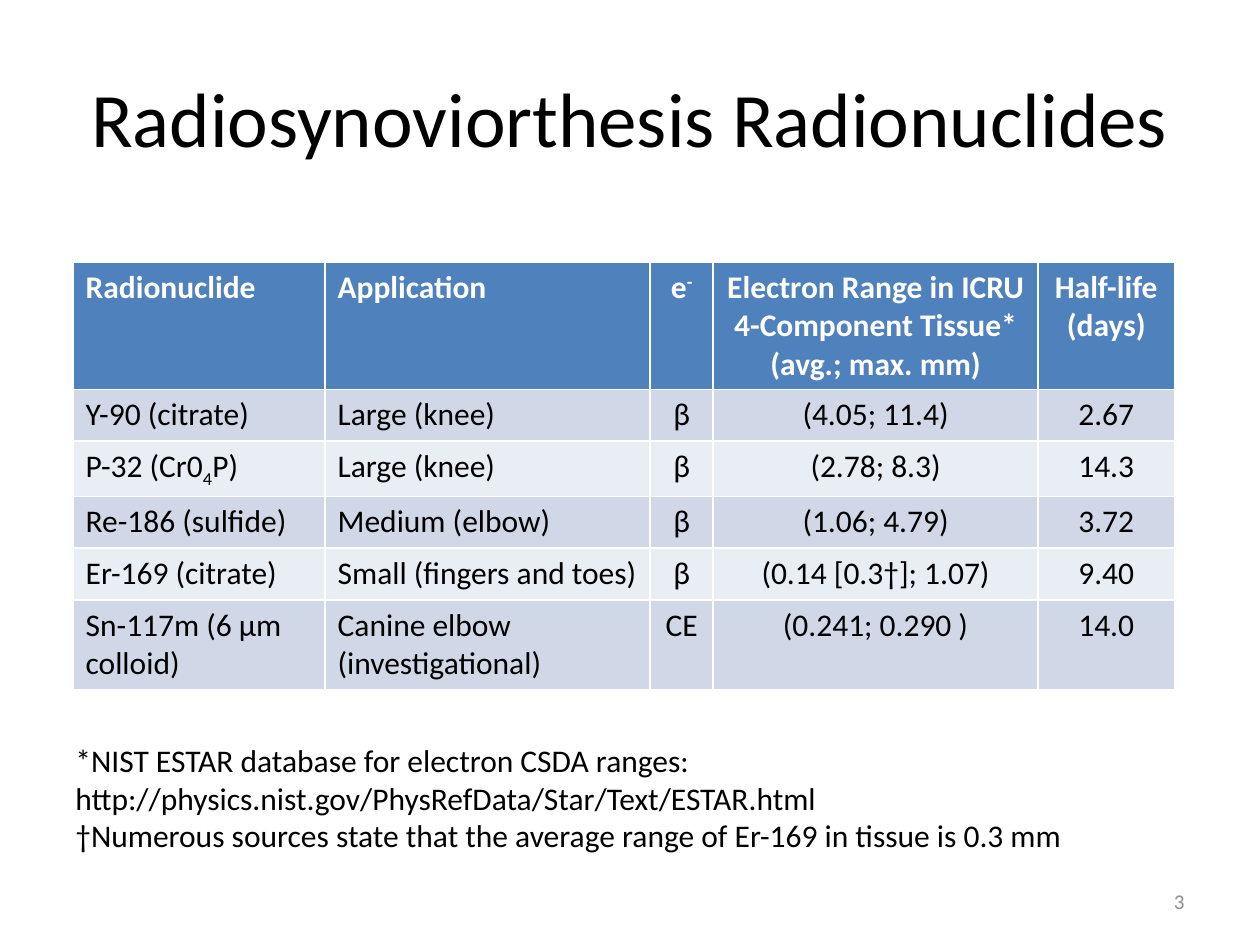
from typing import NamedTuple

from pptx import Presentation
from pptx.dml.color import RGBColor
from pptx.enum.text import MSO_ANCHOR, PP_ALIGN
from pptx.util import Inches, Pt

LEFT, CENTER, RIGHT = PP_ALIGN.LEFT, PP_ALIGN.CENTER, PP_ALIGN.RIGHT
TOP, MIDDLE = MSO_ANCHOR.TOP, MSO_ANCHOR.MIDDLE

FONT = "Calibri"
BLACK, WHITE, GRAY = "000000", "FFFFFF", "8C8C8C"
HEADER_FILL = "4F81BD"
BAND_FILLS = ("E9EDF4", "D0D8E8")


class Script(NamedTuple):
    """A raised (positive) or lowered (negative) run, in percent."""
    text: str
    baseline: int


class Column(NamedTuple):
    heading: object
    width: float
    align: PP_ALIGN


class Radionuclide(NamedTuple):
    name: object
    application: str
    emission: str
    electron_range: str
    half_life: str
    row_height: float = 0.41


COLUMNS = [
    Column("Radionuclide", 2, LEFT),
    Column("Application", 2.58, LEFT),
    Column(("e", Script("-", 30)), 0.5, CENTER),
    Column("Electron Range in ICRU 4-Component Tissue*\n(avg.; max. mm)", 2.58, CENTER),
    Column("Half-life (days)", 1.08, CENTER),
]
HEADER_HEIGHT = 1.01

RADIONUCLIDES = [
    Radionuclide("Y-90 (citrate)", "Large (knee)", "β", "(4.05; 11.4)", "2.67"),
    Radionuclide(("P-32 (Cr0", Script("4", -25), "P)"), "Large (knee)", "β",
                 "(2.78; 8.3)", "14.3", 0.44),
    Radionuclide("Re-186 (sulfide)", "Medium (elbow)", "β", "(1.06; 4.79)", "3.72"),
    Radionuclide("Er-169 (citrate)", "Small (fingers and toes)", "β",
                 "(0.14 [0.3†]; 1.07)", "9.40"),
    Radionuclide("Sn-117m (6 μm colloid)", "Canine elbow (investigational)", "CE",
                 "(0.241; 0.290 )", "14.0", 0.71),
]

FOOTNOTES = (
    "*NIST ESTAR database for electron CSDA ranges:\n"
    "http://physics.nist.gov/PhysRefData/Star/Text/ESTAR.html\n"
    "†Numerous sources state that the average range of Er-169 in tissue is 0.3 mm"
)


def rgb(value: str) -> RGBColor:
    return RGBColor.from_string(value)


def write(frame, content, *, size=18, color=BLACK, bold=False, align=LEFT) -> None:
    """Fill a text frame from a string or a tuple of strings and Scripts."""
    pieces = (content,) if isinstance(content, str) else content
    paragraph = frame.paragraphs[0]
    paragraph.alignment = align
    for piece in pieces:
        text, baseline = piece if isinstance(piece, Script) else (piece, 0)
        for index, line in enumerate(text.split("\n")):
            if index:
                paragraph = frame.add_paragraph()
                paragraph.alignment = align
            run = paragraph.add_run()
            run.text = line
            font = run.font
            font.name, font.size, font.bold = FONT, Pt(size), bold
            font.color.rgb = rgb(color)
            if baseline:
                run._r.get_or_add_rPr().set("baseline", str(baseline * 1000))


def add_text(slide, box, content, *, anchor=TOP, wrap=True, **text_format) -> None:
    frame = slide.shapes.add_textbox(*map(Inches, box)).text_frame
    frame.word_wrap = wrap
    frame.vertical_anchor = anchor
    write(frame, content, **text_format)


def add_radionuclide_table(slide, left: float, top: float) -> None:
    heights = [HEADER_HEIGHT] + [nuclide.row_height for nuclide in RADIONUCLIDES]
    width = sum(column.width for column in COLUMNS)
    table = slide.shapes.add_table(
        len(heights), len(COLUMNS),
        Inches(left), Inches(top), Inches(width), Inches(sum(heights)),
    ).table
    for table_column, column in zip(table.columns, COLUMNS):
        table_column.width = Inches(column.width)
    for table_row, height in zip(table.rows, heights):
        table_row.height = Inches(height)

    headings = [column.heading for column in COLUMNS]
    rows = [headings] + [nuclide[:len(COLUMNS)] for nuclide in RADIONUCLIDES]
    for row_index, row in enumerate(rows):
        is_header = row_index == 0
        fill = HEADER_FILL if is_header else BAND_FILLS[row_index % 2]
        for column_index, content in enumerate(row):
            cell = table.cell(row_index, column_index)
            cell.fill.solid()
            cell.fill.fore_color.rgb = rgb(fill)
            write(cell.text_frame, content, bold=is_header,
                  color=WHITE if is_header else BLACK,
                  align=COLUMNS[column_index].align)


def main() -> None:
    presentation = Presentation()
    presentation.slide_width, presentation.slide_height = Inches(10), Inches(7.5)
    slide = presentation.slides.add_slide(presentation.slide_layouts[6])

    add_text(slide, (0.5, 0.3, 9, 1.25), "Radiosynoviorthesis Radionuclides",
             size=44, align=CENTER, anchor=MIDDLE)
    add_radionuclide_table(slide, 0.58, 2.08)
    add_text(slide, (0.5, 5.83, 8.13, 1.01), FOOTNOTES, wrap=False)
    add_text(slide, (7.17, 6.95, 2.33, 0.4), "3",
             size=12, color=GRAY, align=RIGHT, anchor=MIDDLE)

    presentation.save("out.pptx")


if __name__ == "__main__":
    main()
